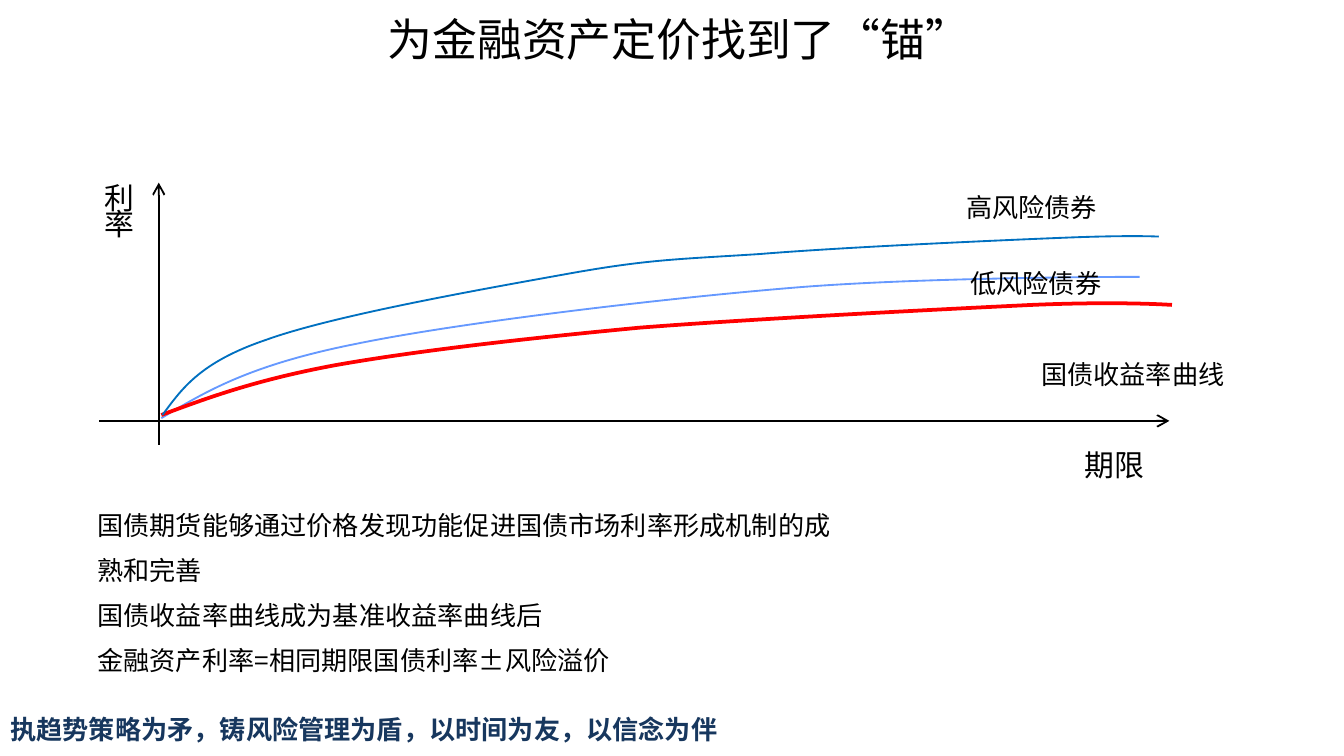
import pptx
import pptx.enum.shapes
import pptx.enum.text
import pptx.util
from lxml import etree
from pptx.dml.color import RGBColor
from pptx.oxml.ns import qn
from pptx.util import Cm

INK = {"text": "000000", "axis": "000000", "foot": "17375E",
       "low": "6699FF", "bond": "FF0000", "high": "0070C0"}
SANS = "Noto Sans CJK SC"
SERIF = "Times New Roman"
ALIGN = pptx.enum.text.PP_ALIGN
ANCHOR = pptx.enum.text.MSO_ANCHOR

# Each curve: colour, width, start point, then three points per Bezier arc (cm in the chart box)
CURVES = [
    ("low", 1, [(1.17, 4.45),
                (1.98, 3.96), (2.82, 3.45), (4.83, 3.05),
                (6.81, 2.64), (10.72, 2.18), (13.18, 1.98),
                (15.65, 1.78), (19.66, 1.78), (19.66, 1.78)]),
    ("bond", 2, [(1.17, 4.39),
                 (2.06, 4.06), (2.95, 3.73), (4.45, 3.45),
                 (5.97, 3.18), (8, 2.95), (10.21, 2.74),
                 (12.4, 2.57), (15.95, 2.39), (17.63, 2.31),
                 (19.3, 2.24), (20.24, 2.31), (20.27, 2.31)]),
    ("high", 1, [(1.19, 4.39),
                 (1.55, 3.91), (1.88, 3.4), (3.15, 2.97),
                 (4.42, 2.51), (7.26, 2.01), (8.81, 1.73),
                 (10.36, 1.45), (10.9, 1.45), (12.47, 1.35),
                 (14.05, 1.22), (16.99, 1.09), (18.26, 1.04),
                 (19.51, 0.99), (20.02, 1.02), (20.02, 1.02)]),
]
# Each label: text, left, top, width, font, size, line pitch
LABELS = [
    ("利\n率", 0.1, 0.13, 0.6, SERIF, 16, 14),
    ("高风险债券", 16.38, 0.3, 2.5, SANS, 14, 13),
    ("低风险债券", 16.46, 1.73, 2.5, SANS, 14, 13),
    ("国债收益率曲线", 17.8, 3.45, 3.5, SANS, 14, 13),
    ("期限", 18.62, 5.21, 1.2, SANS, 16, 13),
]
NOTES = """国债期货能够通过价格发现功能促进国债市场利率形成机制的成
熟和完善
国债收益率曲线成为基准收益率曲线后
金融资产利率=相同期限国债利率±风险溢价"""


def write(shape, text, size=14, font=SANS, color="text", bold=False,
          align=ALIGN.LEFT, anchor=ANCHOR.TOP, pitch=None, wrap=False):
    """Fill a shape's frame, one paragraph a line, without bullets or insets."""
    frame = shape.text_frame
    frame.text = text
    frame.word_wrap = wrap
    frame.auto_size = pptx.enum.text.MSO_AUTO_SIZE.NONE
    frame.vertical_anchor = anchor
    frame.margin_left = frame.margin_right = 0
    frame.margin_top = frame.margin_bottom = 0
    for para in frame.paragraphs:
        props = para._p.get_or_add_pPr()
        props.set("marL", "0")
        props.set("indent", "0")
        etree.SubElement(props, qn("a:buNone"))
        para.alignment = align
        para.space_before = pptx.util.Pt(0)
        if pitch:
            para.line_spacing = pptx.util.Pt(pitch)
        for run in para.runs:
            run.font.size = pptx.util.Pt(size)
            run.font.bold = bold
            run.font.color.rgb = RGBColor.from_string(INK[color])
            run.font.name = font
            east = etree.SubElement(run._r.get_or_add_rPr(), qn("a:ea"))
            east.set("typeface", SANS)


def place(shape, left, top, width, height):
    shape.left, shape.top = left, top
    shape.width, shape.height = width, height


def stroke(shape, color, width):
    shape.line.color.rgb = RGBColor.from_string(INK[color])
    shape.line.width = pptx.util.Pt(width)


def axis(slide, x1, y1, x2, y2):
    line = slide.shapes.add_connector(
        pptx.enum.shapes.MSO_CONNECTOR.STRAIGHT, x1, y1, x2, y2)
    stroke(line, "axis", 1)
    tip = etree.SubElement(line.line._get_or_add_ln(), qn("a:tailEnd"))
    tip.set("type", "arrow")
    etree.SubElement(line._element.spPr, qn("a:effectLst"))


def curve(slide, left, top, color, width, points):
    """Draw a freeform whose points after the first form cubic arcs."""
    spots = [(left + Cm(x), top + Cm(y)) for x, y in points]
    pen = slide.shapes.build_freeform(*spots[0], scale=1.0)
    pen.add_line_segments(spots[1:], close=False)
    shape = pen.convert_to_shape()
    shape.shadow.inherit = False
    shape.fill.background()
    stroke(shape, color, width)
    steps = list(shape._element.iter(qn("a:lnTo")))
    for i in range(0, len(steps), 3):
        arc = etree.Element(qn("a:cubicBezTo"))
        steps[i].addprevious(arc)
        for step in steps[i:i + 3]:
            arc.append(step[0])
            step.getparent().remove(step)


def chart(slide, left, top, width, height):
    """Draw the yield curves with their axes and labels."""
    up, base = left + Cm(1.12), top + Cm(4.5)
    axis(slide, up, top + height, up, top)
    axis(slide, left, base, left + width, base)
    for color, weight, points in CURVES:
        curve(slide, left, top, color, weight, points)
    for text, x, y, wide, font, size, pitch in LABELS:
        box = slide.shapes.add_textbox(left + Cm(x), top + Cm(y), Cm(wide), Cm(0.6))
        write(box, text, size=size, font=font, pitch=pitch)


def title(slide, *box):
    shape = slide.shapes.title
    place(shape, *box)
    write(shape, "为金融资产定价找到了“锚”", size=24, font="Calibri",
          align=ALIGN.CENTER, anchor=ANCHOR.MIDDLE, wrap=True)


def notes(slide, *box):
    shape = slide.placeholders[1]
    place(shape, *box)
    write(shape, NOTES, pitch=24)


def footer(slide, *box):
    shape = slide.shapes.add_textbox(*box)
    write(shape, "执趋势策略为矛，铸风险管理为盾，以时间为友，以信念为伴",
          color="foot", bold=True, align=ALIGN.CENTER,
          anchor=ANCHOR.MIDDLE, wrap=True)


def main():
    deck = pptx.Presentation()
    deck.slide_width, deck.slide_height = Cm(25.4), Cm(14.28)
    slide = deck.slides.add_slide(deck.slide_layouts[1])
    footer(slide, Cm(0), Cm(13.33), Cm(13.77), Cm(0.87))
    title(slide, Cm(1.4), Cm(0), Cm(22.86), Cm(1.45))
    chart(slide, Cm(1.88), Cm(3.45), Cm(20.22), Cm(4.95))
    notes(slide, Cm(1.84), Cm(9.37), Cm(22.68), Cm(3.5))
    deck.save("out.pptx")


if __name__ == "__main__":
    main()
